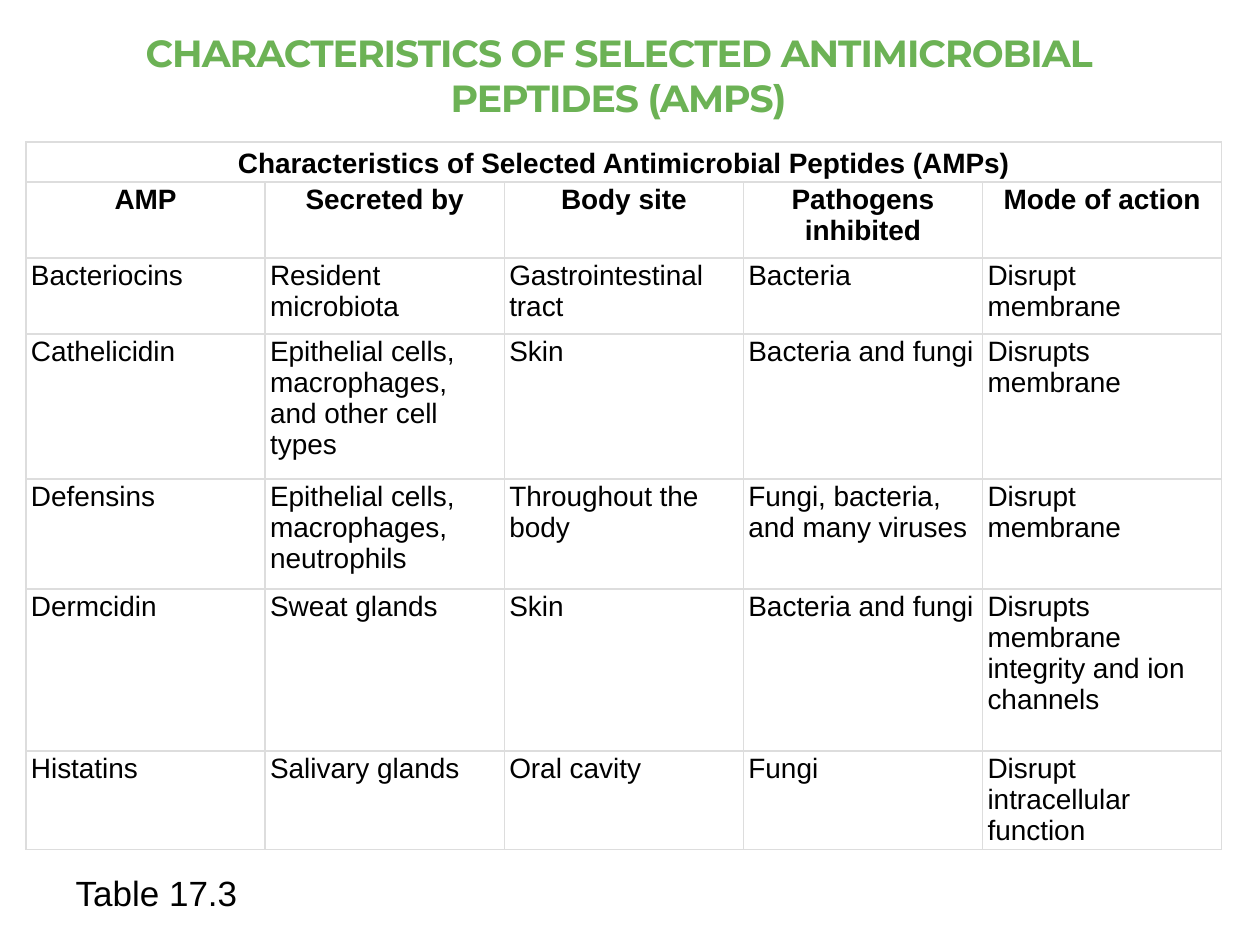
from lxml import etree
from pptx import Presentation, util as u
from pptx.dml.color import RGBColor
from pptx.enum import text
from pptx.oxml.ns import qn

PX_PER_INCH = 126
COLORS = {"title": "6CB255", "ink": "000000", "paper": "FFFFFF", "rule": "DDDDDD"}
ROW_HEIGHTS = [40, 76, 76, 145, 110, 162, 93]
HEADING = "Characteristics of Selected Antimicrobial Peptides (AMPs)"
ROWS = [
    ["AMP", "Secreted by", "Body site", "Pathogens inhibited", "Mode of action"],
    ["Bacteriocins", "Resident microbiota", "Gastrointestinal tract", "Bacteria",
     "Disrupt membrane"],
    ["Cathelicidin", "Epithelial cells, macrophages, and other cell types", "Skin",
     "Bacteria and fungi", "Disrupts membrane"],
    ["Defensins", "Epithelial cells, macrophages, neutrophils", "Throughout the body",
     "Fungi, bacteria, and many viruses", "Disrupt membrane"],
    ["Dermcidin", "Sweat glands", "Skin", "Bacteria and fungi",
     "Disrupts membrane integrity and ion channels"],
    ["Histatins", "Salivary glands", "Oral cavity", "Fungi",
     "Disrupt intracellular function"],
]


def px(length):
    return u.Emu(round(length * 914400 / PX_PER_INCH))


def rgb(name):
    return RGBColor.from_string(COLORS[name])


def style(para, size, color, face="Arial", bold=False):
    for span in para.runs:
        span.font.size = u.Pt(size)
        span.font.name = face
        span.font.bold = bold
        span.font.color.rgb = rgb(color)


def place(holder, box, words):
    holder.left, holder.top, holder.width, holder.height = map(px, box)
    frame = holder.text_frame
    frame.text = words
    frame.word_wrap = True
    frame.auto_size = text.MSO_AUTO_SIZE.NONE
    return frame


def add_title(page, box):
    frame = place(page.shapes.title, box, HEADING.upper())
    frame.vertical_anchor = text.MSO_ANCHOR.BOTTOM
    frame.margin_top = frame.margin_bottom = px(3)
    para = frame.paragraphs[0]
    para.alignment = text.PP_ALIGN.CENTER
    style(para, 21.6, "title", "Montserrat", True)
    for span in para.runs:
        span.font._element.set("spc", "-60")


def add_caption(page, box):
    frame = place(page.placeholders[1], box, "Table 17.3")
    frame.margin_top = px(10)
    para = frame.paragraphs[0]
    props = para._p.get_or_add_pPr()
    props.set("marL", "0")
    props.set("indent", "0")
    etree.SubElement(props, qn("a:buNone"))
    para.space_before = u.Pt(0)
    para.space_after = u.Pt(6)
    style(para, 20, "ink")


def add_borders(cell):
    props = cell._tc.get_or_add_tcPr()
    for index, side in enumerate(("lnL", "lnR", "lnT", "lnB")):
        line = etree.Element(qn(f"a:{side}"), w=str(u.Pt(1)))
        fill = etree.SubElement(line, qn("a:solidFill"))
        etree.SubElement(fill, qn("a:srgbClr"), val=COLORS["rule"])
        props.insert(index, line)


def fill_cell(cell, words, heading):
    cell.text = words
    cell.margin_left = cell.margin_right = px(5)
    cell.margin_top = cell.margin_bottom = u.Inches(0.02)
    cell.fill.solid()
    cell.fill.fore_color.rgb = rgb("paper")
    add_borders(cell)
    para = cell.text_frame.paragraphs[0]
    para.alignment = text.PP_ALIGN.CENTER if heading else text.PP_ALIGN.LEFT
    style(para, 16, "ink", bold=heading)


def add_peptide_table(page, box):
    columns = len(ROWS[0])
    table = page.shapes.add_table(len(ROW_HEIGHTS), columns, *map(px, box)).table
    for column in table.columns:
        column.width = px(box[2] / columns)
    for row, height in zip(table.rows, ROW_HEIGHTS):
        row.height = px(height)
    heading_row = [HEADING] + [""] * (columns - 1)
    for r, row in enumerate([heading_row] + ROWS):
        for c, words in enumerate(row):
            fill_cell(table.cell(r, c), words, r < 2)
    table.cell(0, 0).merge(table.cell(0, columns - 1))
    table.cell(0, 0).vertical_anchor = text.MSO_ANCHOR.BOTTOM


def main():
    deck = Presentation()
    deck.slide_width, deck.slide_height = u.Inches(10), u.Inches(7.5)
    page = deck.slides.add_slide(deck.slide_layouts[1])
    add_title(page, (63, 33, 1111, 90))
    add_caption(page, (63, 861, 1111, 50))
    add_peptide_table(page, (26, 142, 1196, 714))
    deck.save("out.pptx")


if __name__ == "__main__":
    main()
